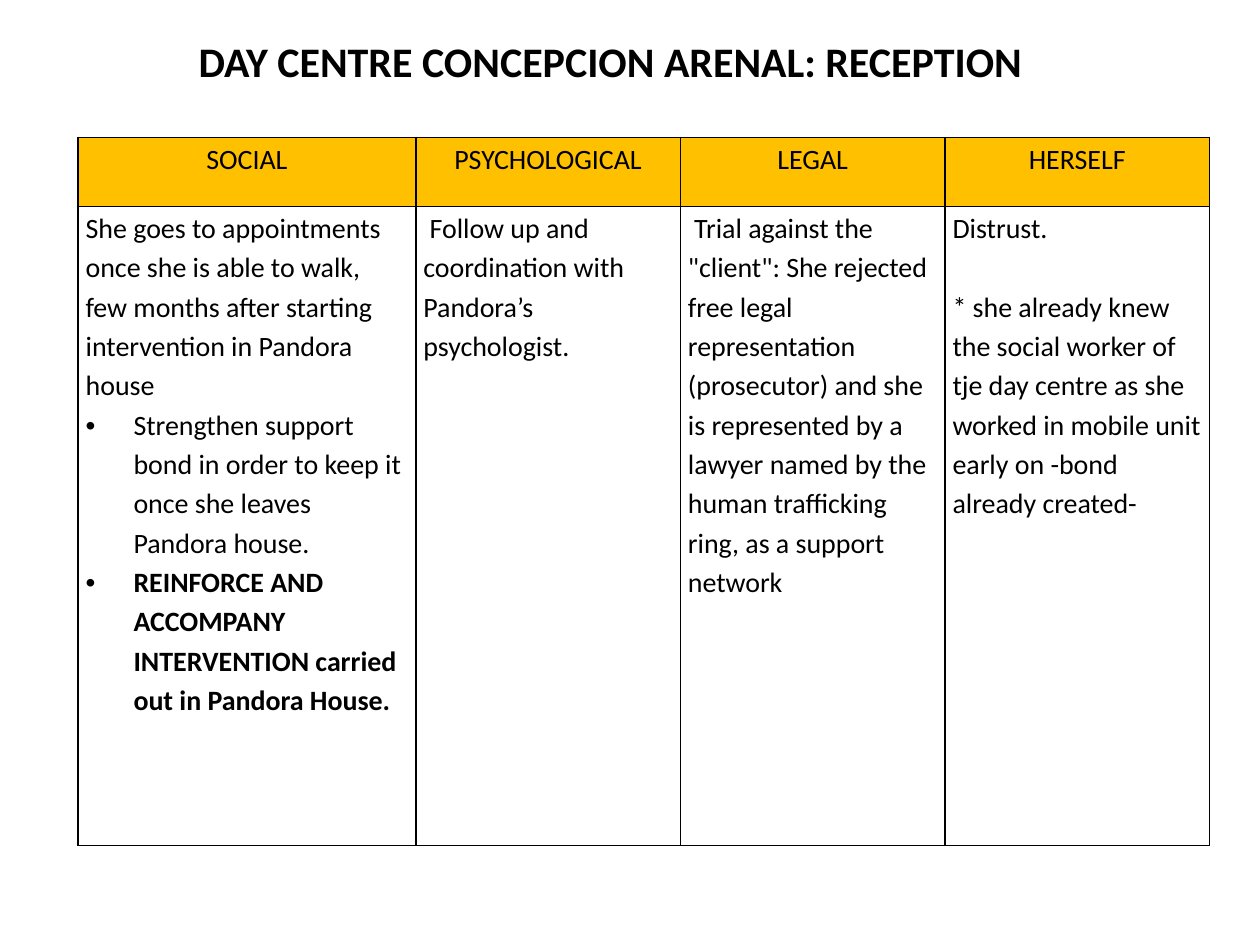
from lxml import etree
from pptx import Presentation
from pptx.dml.color import RGBColor
from pptx.enum import text
from pptx.oxml import ns
from pptx.util import Inches, Pt

TITLE = "DAY CENTRE CONCEPCION ARENAL: RECEPTION"
# Each column: heading, width, paragraphs as (words, format)
COLUMNS = [
    ("SOCIAL", 2.68, [
        ("She goes to appointments once she is able to walk, few months after "
         "starting intervention in Pandora house", {}),
        ("Strengthen support bond in order to keep it once she leaves Pandora house.",
         {"bullet": True}),
        ("REINFORCE AND ACCOMPANY INTERVENTION carried out in Pandora House.",
         {"bullet": True, "bold": True}),
    ]),
    ("PSYCHOLOGICAL", 2.1, [
        ("Follow up and coordination with Pandora’s psychologist.", {"indent": 0.05}),
    ]),
    ("LEGAL", 2.1, [
        ('Trial against the "client": She rejected free legal representation '
         "(prosecutor) and she is represented by a lawyer named by the human "
         "trafficking ring, as a support network", {"indent": 0.05}),
    ]),
    ("HERSELF", 2.1, [
        ("Distrust.", {}),
        ("* she already knew the social worker of tje day centre as she worked in "
         "mobile unit early on -bond already created-", {"before": 22.5}),
    ]),
]
ROW_HEIGHTS = [0.55, 5.07]
THEME = {
    "font": "Calibri", "title": 24, "body": 16, "spacing": 1.15,
    "ink": RGBColor.from_string("000000"),
    "heading": RGBColor.from_string("FFC000"),
}


def add_xml(parent, tag, **attributes):
    return etree.SubElement(parent, ns.qn(tag), attributes)


def write(frame, paragraphs, size=THEME["body"], align=text.PP_ALIGN.LEFT,
          spacing=THEME["spacing"], bold=False):
    """Fill a text frame with (words, format) pairs."""
    for number, (words, style) in enumerate(paragraphs):
        paragraph = frame.add_paragraph() if number else frame.paragraphs[0]
        paragraph.alignment = align
        paragraph.line_spacing = spacing
        paragraph.space_before = Pt(style.get("before", 0))
        run = paragraph.add_run()
        run.text = words
        run.font.name = THEME["font"]
        run.font.size = Pt(size)
        run.font.bold = style.get("bold", bold)
        run.font.color.rgb = THEME["ink"]
        bullet = style.get("bullet", False)
        properties = paragraph._p.get_or_add_pPr()
        properties.set("marL", str(Inches(0.38 if bullet else 0)))
        properties.set("indent", str(Inches(-0.38 if bullet else style.get("indent", 0))))
        if bullet:
            add_xml(properties, "a:buFont", typeface="Arial")
            add_xml(properties, "a:buChar", char="•")


def format_cell(cell, side_margin, fill=None):
    cell.margin_left = cell.margin_right = Inches(side_margin)
    cell.margin_top = cell.margin_bottom = 0
    properties = cell._tc.get_or_add_tcPr()
    for side in ("L", "R", "T", "B"):
        line = add_xml(properties, f"a:ln{side}", w=str(Pt(1)))
        add_xml(add_xml(line, "a:solidFill"), "a:srgbClr", val=str(THEME["ink"]))
    if fill is None:
        cell.fill.background()
    else:
        cell.fill.solid()
        cell.fill.fore_color.rgb = fill


def add_title(slide):
    title = slide.shapes.title
    title.left, title.top = Inches(0.47), Inches(0.23)
    title.width, title.height = Inches(8.75), Inches(1.31)
    frame = title.text_frame
    frame.word_wrap = True
    frame.auto_size = text.MSO_AUTO_SIZE.NONE
    frame.vertical_anchor = text.MSO_ANCHOR.TOP
    write(frame, [(TITLE, {})], size=THEME["title"], align=text.PP_ALIGN.CENTER,
          spacing=1.0, bold=True)


def add_reception_table(slide):
    width = sum(column[1] for column in COLUMNS)
    table = slide.shapes.add_table(
        len(ROW_HEIGHTS), len(COLUMNS), Inches(0.62), Inches(1.09),
        Inches(width), Inches(sum(ROW_HEIGHTS))).table
    table.first_row = table.horz_banding = False
    for row, height in zip(table.rows, ROW_HEIGHTS):
        row.height = Inches(height)
    for index, (heading, column_width, paragraphs) in enumerate(COLUMNS):
        table.columns[index].width = Inches(column_width)
        head, body = table.cell(0, index), table.cell(1, index)
        format_cell(head, 0.02, THEME["heading"])
        format_cell(body, 0.06)
        write(head.text_frame, [(heading, {})], align=text.PP_ALIGN.CENTER)
        write(body.text_frame, paragraphs)


def main():
    deck = Presentation()
    deck.slide_width, deck.slide_height = Inches(10), Inches(7.5)
    slide = deck.slides.add_slide(deck.slide_layouts.get_by_name("Title Only"))
    add_title(slide)
    add_reception_table(slide)
    deck.save("out.pptx")


if __name__ == "__main__":
    main()
